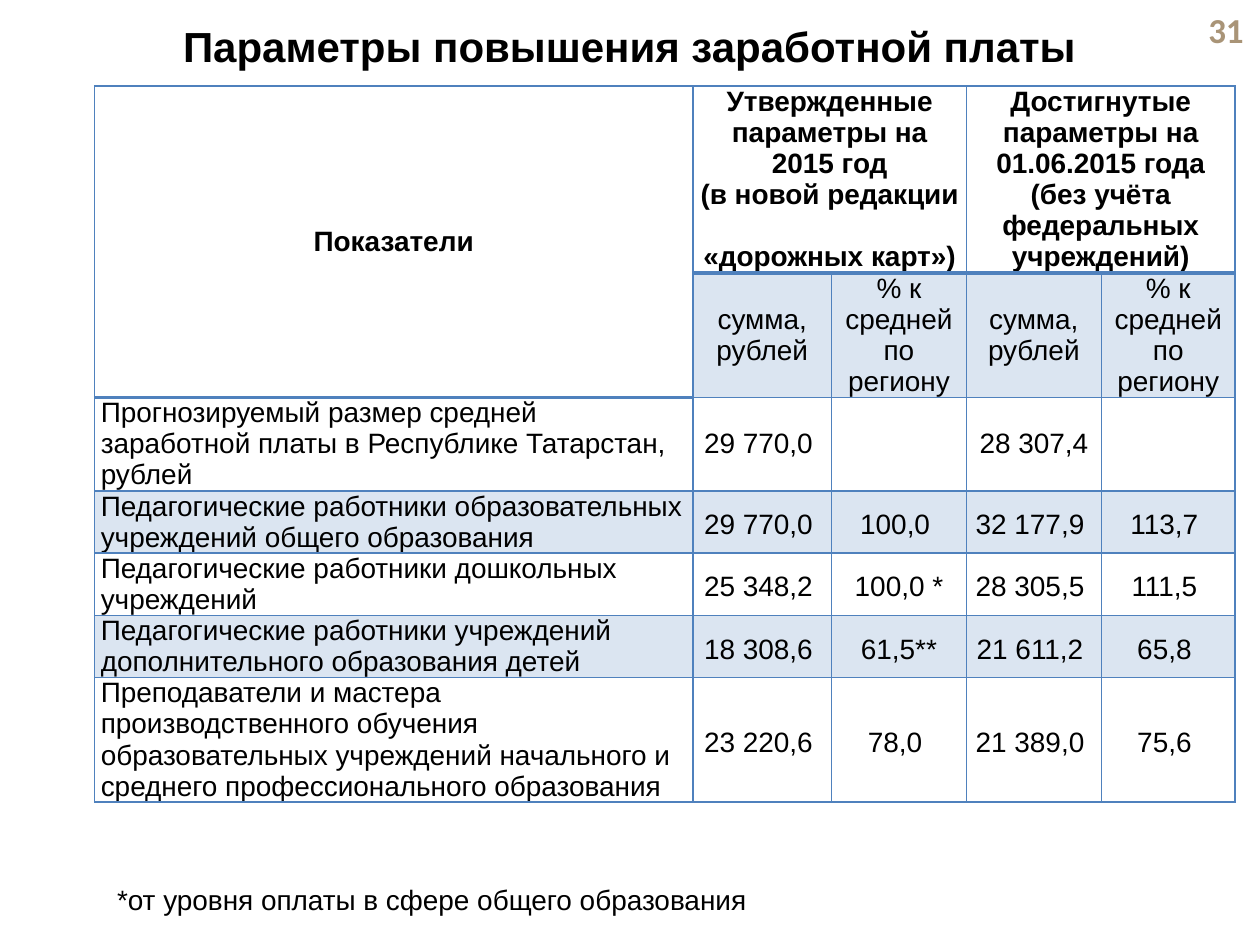
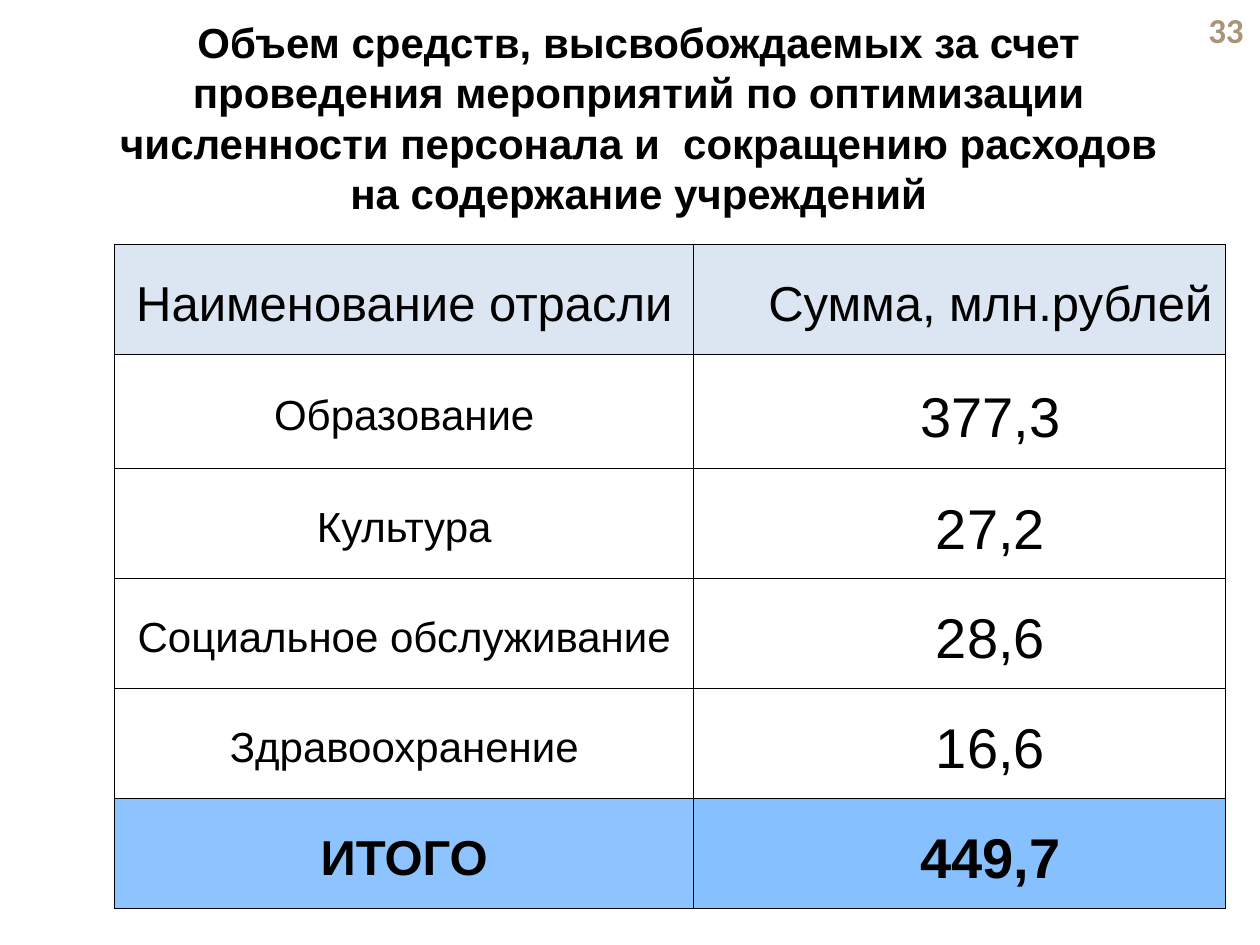
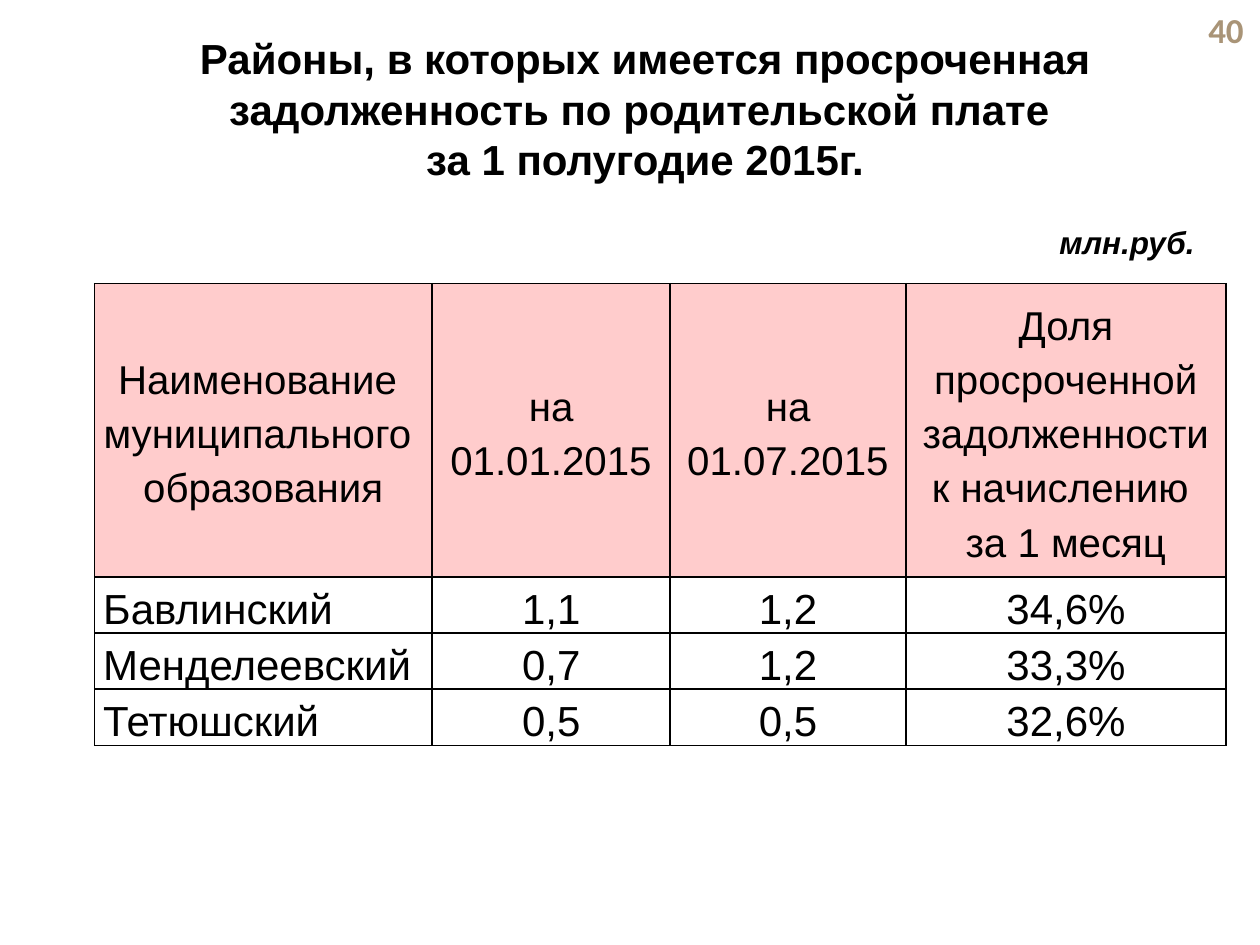
from copy import deepcopy

from lxml import etree
from pptx import Presentation
from pptx.dml.color import RGBColor
from pptx.enum import text as t
from pptx.oxml.ns import qn
from pptx.util import Pt

BLACK, BLUE, PALE_BLUE = "000000", "4F81BD", "DCE6F2"
SKY, PINK, SAND = "66AFFF", "FFCCCC", "A99477"
LEFT, CENTER = t.PP_ALIGN.LEFT, t.PP_ALIGN.CENTER
RIGHT, JUSTIFY = t.PP_ALIGN.RIGHT, t.PP_ALIGN.JUSTIFY
MIDDLE, BOTTOM = t.MSO_ANCHOR.MIDDLE, t.MSO_ANCHOR.BOTTOM


def paint(fill, colour, opacity=None):
    """Make a fill solid; opacity is a percentage."""
    fill.solid()
    fill.fore_color.rgb = RGBColor.from_string(colour)
    if opacity:
        srgb = fill._xPr.find(qn("a:solidFill") + "/" + qn("a:srgbClr"))
        etree.SubElement(srgb, qn("a:alpha"), val=str(opacity * 1000))


def write(frame, text, size=24, font="Arial", colour=BLACK, bold=False,
          italic=False, align=CENTER, spacing=None, indent=None):
    """Fill a text frame: \\n starts a paragraph, \\v breaks a line."""
    frame.text = text
    frame.word_wrap = True
    for para in frame.paragraphs:
        para.alignment = align
        if spacing:
            para.line_spacing = spacing
        if indent:
            para._p.get_or_add_pPr().set("indent", str(int(Pt(indent))))
        for span in para.runs:
            span.font.size, span.font.name = Pt(size), font
            span.font.bold, span.font.italic = bold, italic
            paint(span.font.fill, colour)
        for line_break in para._p.findall(qn("a:br")):
            line_break.append(deepcopy(para.runs[0]._r.rPr))


salary = {
    "title": "Параметры повышения заработной платы",
    "title_at": (0.7, 3.6, 718, 45.4),
    "number": "31",
    "table_at": (54, 49),
    "columns": (342, 79.2, 77, 77.2, 76.4),
    "rows": (107, 71, 53, 35.6, 35.6, 35.6, 71),
    "line": (BLUE, 1),
    "merged": [((0, 0), (1, 0)), ((0, 1), (0, 2)), ((0, 3), (0, 4))],
    "heavy": [(0, 0), (0, 1), (0, 2), (0, 3), (0, 4), (1, 0)],
    "cells": [
        ("Показатели",
         "Утвержденные параметры на 2015 год\v(в новой редакции \v«дорожных карт»)", "",
         "Достигнутые параметры на 01.06.2015 года\v(без учёта федеральных учреждений)", ""),
        ("", "сумма, рублей", "% к средней по региону",
         "сумма, рублей", "% к средней по региону"),
        ("Прогнозируемый размер средней заработной платы в Республике Татарстан, рублей",
         "29 770,0 ", "", "28 307,4", ""),
        ("Педагогические работники образовательных учреждений общего образования",
         "29 770,0 ", "100,0 ", "32 177,9 ", "113,7 "),
        ("Педагогические работники дошкольных учреждений",
         "25 348,2 ", "100,0 *", "28 305,5 ", "111,5 "),
        ("Педагогические работники учреждений дополнительного образования детей",
         "18 308,6 ", "61,5**", "21 611,2 ", "65,8 "),
        ("Преподаватели и мастера производственного обучения образовательных "
         "учреждений начального и среднего профессионального образования",
         "23 220,6 ", "78,0 ", "21 389,0 ", "75,6 "),
    ],
}
savings = {
    "title": "Объем средств, высвобождаемых за счет проведения мероприятий по "
             "оптимизации численности персонала и  сокращению расходов "
             "на содержание учреждений",
    "title_at": (59, 15.8, 612, 102.2),
    "number": "33",
    "table_at": (65.5, 139.7),
    "columns": (331, 304),
    "rows": (62.8, 65.2, 62.8, 62.8, 62.8, 62.8),
    "line": (BLACK, 0.5),
    "merged": [],
    "heavy": [],
    "cells": [
        ("Наименование отрасли", "Сумма, млн.рублей"),
        ("Образование", "377,3"),
        ("Культура", "27,2"),
        ("Социальное обслуживание", "28,6"),
        ("Здравоохранение", "16,6"),
        ("ИТОГО", "449,7"),
    ],
}
debts = {
    "title": "Районы, в которых имеется просроченная задолженность "
             "по родительской плате \vза 1 полугодие 2015г.",
    "title_at": (54, 20.9, 629.3, 82),
    "number": "40",
    "table_at": (54, 162),
    "columns": (193, 136, 134.8, 182.8),
    "rows": (167.6, 32, 32, 32),
    "line": (BLACK, 1),
    "merged": [],
    "heavy": [],
    "cells": [
        ("Наименование \nмуниципального \nобразования", "на 01.01.2015", "на 01.07.2015",
         "Доля просроченной задолженности к начислению \vза 1 месяц"),
        ("Бавлинский", "1,1", "1,2", "34,6%"),
        ("Менделеевский", "0,7", "1,2", "33,3%"),
        ("Тетюшский", "0,5", "0,5", "32,6%"),
    ],
}

deck = Presentation()
deck.slide_width, deck.slide_height = Pt(720), Pt(540)

# Shared parts: title, page number and table grid
pages, tables = [], []
for plan in (salary, savings, debts):
    page = deck.slides.add_slide(deck.slide_layouts[5])
    title = page.shapes.title
    title.left, title.top, title.width, title.height = map(Pt, plan["title_at"])
    title.text_frame.vertical_anchor = MIDDLE
    write(title.text_frame, plan["title"], bold=True)

    columns, rows = plan["columns"], plan["rows"]
    left, top = plan["table_at"]
    table = page.shapes.add_table(len(rows), len(columns), Pt(left), Pt(top),
                                  Pt(sum(columns)), Pt(sum(rows))).table
    table.first_row = table.horz_banding = False
    for column, width in zip(table.columns, columns):
        column.width = Pt(width)
    for row, height in zip(table.rows, rows):
        row.height = Pt(height)

    colour, thin = plan["line"]
    for r in range(len(rows)):
        for c in range(len(columns)):
            cell = table.cell(r, c)
            cell.vertical_anchor = MIDDLE
            cell.margin_top = cell.margin_bottom = 0
            for edge, above in (("L", None), ("R", None), ("T", r - 1), ("B", r)):
                weight = 2 if (above, c) in plan["heavy"] else thin
                line = etree.SubElement(cell._tc.tcPr, qn("a:ln" + edge), w=str(int(Pt(weight))))
                solid = etree.SubElement(line, qn("a:solidFill"))
                etree.SubElement(solid, qn("a:srgbClr"), val=colour)
            cell.fill.background()
    for first, last in plan["merged"]:
        table.cell(*first).merge(table.cell(*last))

    number = page.shapes.add_textbox(Pt(671.8), Pt(4.6), Pt(46), Pt(24.5))
    number.text_frame.vertical_anchor = MIDDLE
    write(number.text_frame, plan["number"], size=20, font="Calibri",
          colour=SAND, bold=True, align=RIGHT)
    pages.append(page)
    tables.append(table)

# Salary parameters
for r, texts in enumerate(salary["cells"]):
    for c, words in enumerate(texts):
        cell = tables[0].cell(r, c)
        if cell.is_spanned:
            continue
        figure = r > 2 and c > 0
        cell.margin_left = cell.margin_right = Pt(5 if figure else 3.6)
        write(cell.text_frame, words, size=16, bold=r == 0,
              align=LEFT if r > 1 and c == 0 else CENTER,
              spacing=1.2 if figure else None)
        if r % 2:
            paint(cell.fill, BLUE, 20)

footnote = pages[0].shapes.add_textbox(Pt(59.8), Pt(500.4), Pt(652.3), Pt(26.6))
footnote.text_frame.vertical_anchor = MIDDLE
write(footnote.text_frame, "*от уровня оплаты в сфере общего образования",
      size=16, align=JUSTIFY)
footnote.text_frame.auto_size = t.MSO_AUTO_SIZE.SHAPE_TO_FIT_TEXT

# Savings by sector
total = len(savings["cells"]) - 1
for r, texts in enumerate(savings["cells"]):
    for c, words in enumerate(texts):
        cell = tables[1].cell(r, c)
        cell.margin_left = cell.margin_right = Pt(3)
        size = 28 if r == 0 or (r == total and c == 0) else (24, 32)[c]
        write(cell.text_frame, words, size=size, bold=r == total,
              spacing=1.2, indent=(None, 35)[c])
        if r == 0:
            paint(cell.fill, PALE_BLUE)
        elif r == total:
            paint(cell.fill, SKY, (74, 78)[c])

# Overdue parental fees
for r, texts in enumerate(debts["cells"]):
    for c, words in enumerate(texts):
        cell = tables[2].cell(r, c)
        cell.margin_left = cell.margin_right = Pt(5)
        district = r > 0 and c == 0
        write(cell.text_frame, words, size=24 if r else 23, spacing=1.2,
              align=LEFT if district else CENTER)
        if district:
            cell.vertical_anchor = BOTTOM
        if r == 0:
            paint(cell.fill, PINK)

unit = pages[2].shapes.add_textbox(Pt(591.8), Pt(119.5), Pt(103), Pt(33))
write(unit.text_frame, "млн.руб.", size=18, bold=True, italic=True,
      align=LEFT, spacing=1.2, indent=6.5)
unit.text_frame.auto_size = t.MSO_AUTO_SIZE.SHAPE_TO_FIT_TEXT

deck.save("out.pptx")
